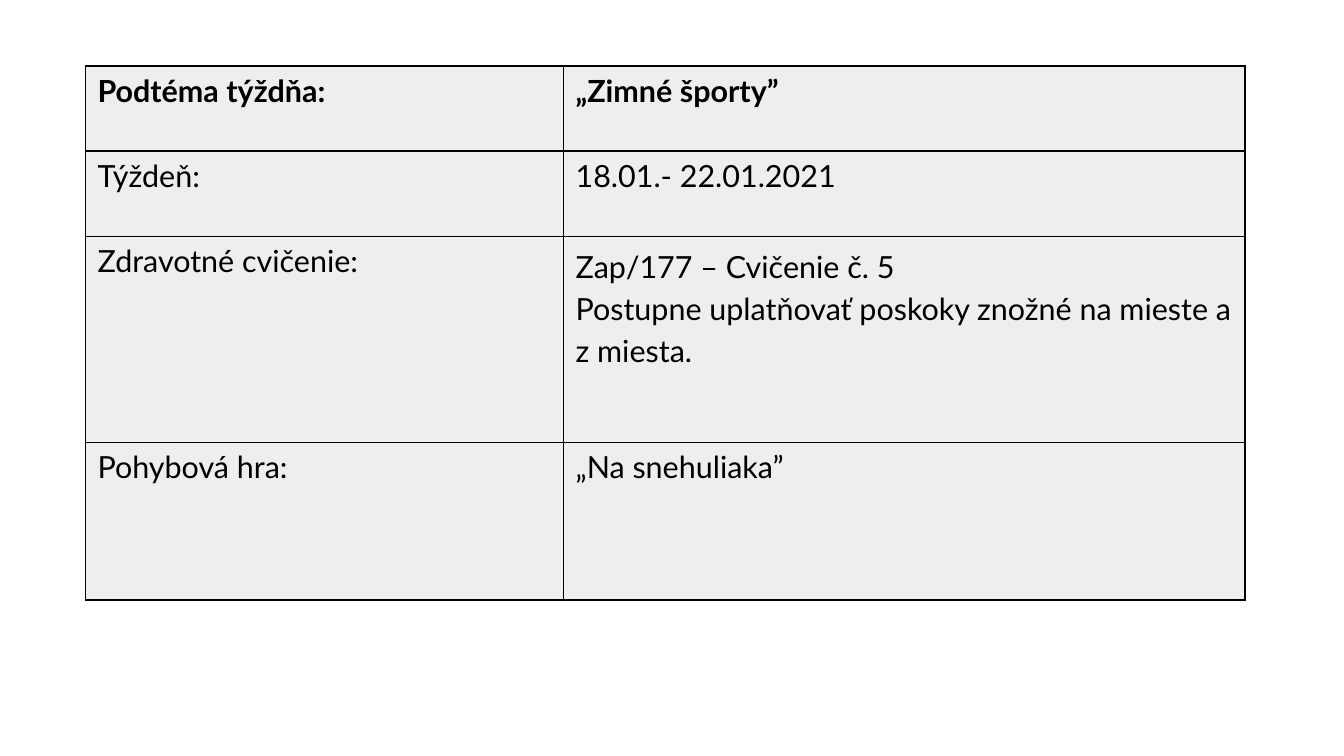
import pptx
import pptx.dml.color
import pptx.enum.text
import pptx.oxml
import pptx.oxml.ns
import pptx.util

SLIDE_WIDTH, SLIDE_HEIGHT = 11.02, 6.2
TABLE_LEFT, TABLE_TOP = 0.7, 0.54
COLUMN_WIDTHS = [3.92, 5.59]
ROW_HEIGHTS = [0.7, 0.7, 1.69, 1.29]
BORDER_WIDTH = 0.96
INK, CELL_FILL = "000000", "EEEEEE"

# Each row: label, lines of the entry, format of the label, format of the entry
WEEK_PLAN = [
    ("Podtéma týždňa:", ["„Zimné športy”"], {"bold": True}, {"bold": True}),
    ("Týždeň:", ["18.01.- 22.01.2021"], {}, {}),
    ("Zdravotné cvičenie:",
     ["Zap/177 – Cvičenie č. 5",
      "Postupne uplatňovať poskoky znožné na mieste a z miesta."],
     {}, {"line_spacing": 1.15}),
    ("Pohybová hra:", ["„Na snehuliaka”"], {}, {}),
]


def color(hex_string):
    return pptx.dml.color.RGBColor.from_string(hex_string)


def write_text(text_frame, lines, size=18, font="Lato", ink=INK, bold=False,
               line_spacing=None):
    for index, line in enumerate(lines):
        paragraph = text_frame.paragraphs[0] if index == 0 else text_frame.add_paragraph()
        paragraph.alignment = pptx.enum.text.PP_ALIGN.LEFT
        if line_spacing:
            paragraph.line_spacing = line_spacing
        run = paragraph.add_run()
        run.text = line
        run.font.size = pptx.util.Pt(size)
        run.font.name = font
        run.font.bold = bold
        run.font.color.rgb = color(ink)


def add_borders(cell, width=BORDER_WIDTH, ink=INK):
    properties = cell._tc.get_or_add_tcPr()
    for side in ("lnL", "lnR", "lnT", "lnB"):
        properties.append(pptx.oxml.parse_xml(
            f'<a:{side} {pptx.oxml.ns.nsdecls("a")} w="{pptx.util.Pt(width)}">'
            f'<a:solidFill><a:srgbClr val="{ink}"/></a:solidFill></a:{side}>'))


def format_cell(cell, lines, **text_format):
    # Borders come before the fill in the cell properties
    add_borders(cell)
    cell.fill.solid()
    cell.fill.fore_color.rgb = color(CELL_FILL)
    cell.vertical_anchor = pptx.enum.text.MSO_ANCHOR.TOP
    cell.margin_left = cell.margin_right = pptx.util.Inches(0.1)
    cell.margin_top = cell.margin_bottom = pptx.util.Inches(0.05)
    write_text(cell.text_frame, lines, **text_format)


def add_week_table(slide):
    inches = pptx.util.Inches
    table = slide.shapes.add_table(
        len(ROW_HEIGHTS), len(COLUMN_WIDTHS), inches(TABLE_LEFT), inches(TABLE_TOP),
        inches(sum(COLUMN_WIDTHS)), inches(sum(ROW_HEIGHTS))).table
    table.first_row = table.horz_banding = False
    for column, width in zip(table.columns, COLUMN_WIDTHS):
        column.width = inches(width)
    for row, height in zip(table.rows, ROW_HEIGHTS):
        row.height = inches(height)
    for row, (label, entry, label_format, entry_format) in enumerate(WEEK_PLAN):
        format_cell(table.cell(row, 0), [label], **label_format)
        format_cell(table.cell(row, 1), entry, **entry_format)


def main():
    presentation = pptx.Presentation()
    presentation.slide_width = pptx.util.Inches(SLIDE_WIDTH)
    presentation.slide_height = pptx.util.Inches(SLIDE_HEIGHT)

    # Blank layout: the slide holds only the table
    slide = presentation.slides.add_slide(presentation.slide_layouts[6])
    add_week_table(slide)
    presentation.save("out.pptx")


if __name__ == "__main__":
    main()
